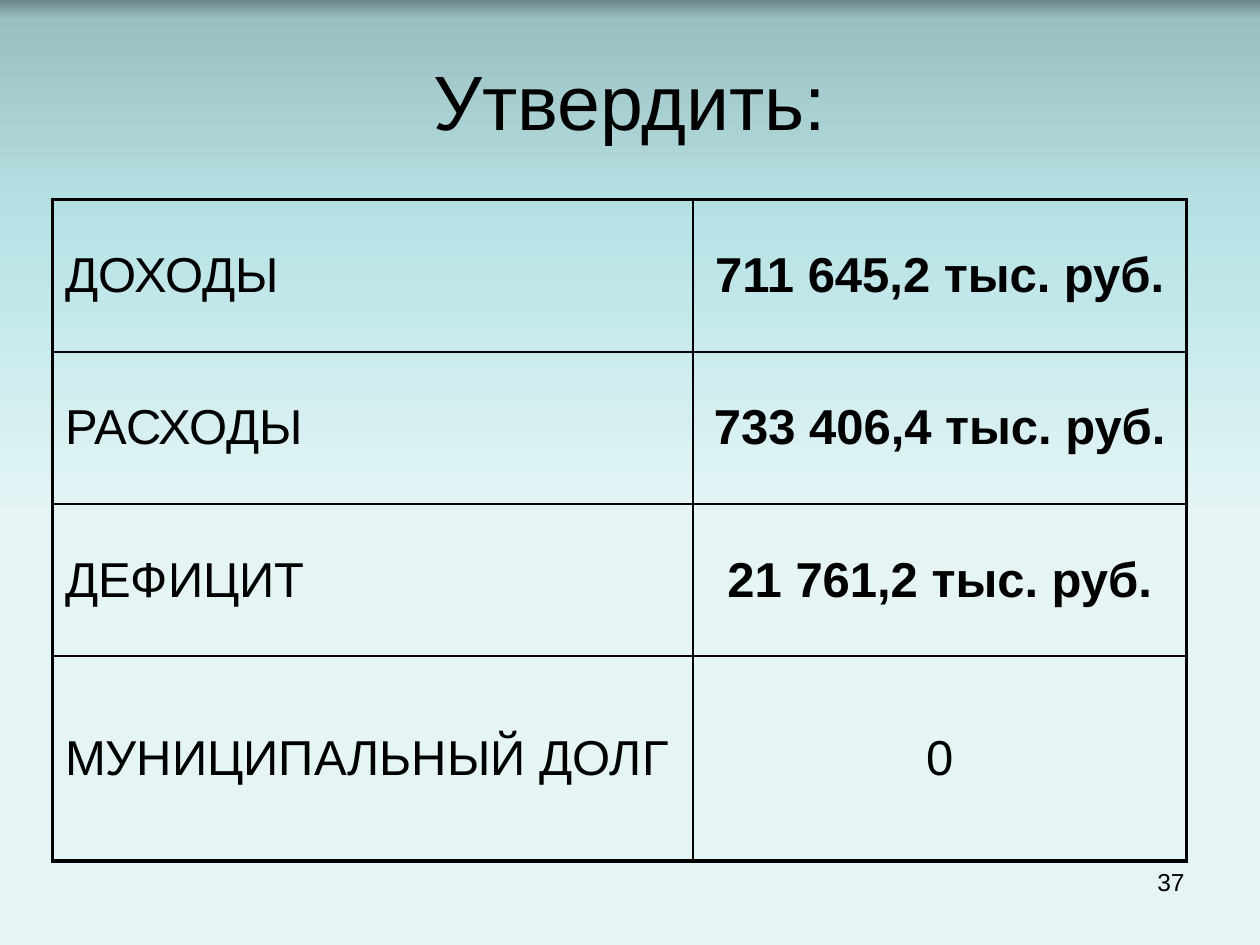
from lxml import etree
from pptx import Presentation
from pptx.dml.color import RGBColor
from pptx.enum import text
from pptx.oxml import ns
from pptx.util import Pt

# Content
TITLE = "Утвердить:"
PAGE_NUMBER = "37"
BUDGET = [
    ("ДОХОДЫ", "711 645,2 тыс. руб."),
    ("РАСХОДЫ", "733 406,4 тыс. руб."),
    ("ДЕФИЦИТ", "21 761,2 тыс. руб."),
    ("МУНИЦИПАЛЬНЫЙ ДОЛГ", "0"),
]

# Look, lengths in points
BACKGROUND = [(0, "6D8688"), (2, "9BBFC2"), (24, "B8E3E6"), (55, "E5F5F6")]
INK = "000000"
COLUMN_WIDTHS = [366, 282]
ROW_HEIGHTS = [87, 87, 87, 117]
TABLE_LEFT, TABLE_TOP = 30, 114
INNER_LINE, OUTER_LINE = 1, 2.25
LEFT, CENTER, RIGHT = (text.PP_ALIGN.LEFT, text.PP_ALIGN.CENTER,
                       text.PP_ALIGN.RIGHT)
MIDDLE = text.MSO_ANCHOR.MIDDLE


def color(value):
    return RGBColor.from_string(value)


def add_xml(parent, tag, **attributes):
    return etree.SubElement(parent, ns.qn(tag), attributes)


def write(frame, words, size, align, bold=False, before=0):
    para = frame.paragraphs[0]
    para.alignment = align
    para.space_before = Pt(before)
    span = para.add_run()
    span.text = words
    looks = {"name": "Arial", "size": Pt(size), "bold": bold}
    for name, value in looks.items():
        setattr(span.font, name, value)
    span.font.color.rgb = color(INK)


def paint_background(page):
    fill = page.background.fill
    fill.gradient()
    fill.gradient_angle = 270  # counter-clockwise, so the ramp runs downwards
    stops = page.background._cSld.find(".//" + ns.qn("a:gsLst"))
    for stop in list(stops):
        stops.remove(stop)
    for percent, value in BACKGROUND:
        stop = add_xml(stops, "a:gs", pos=str(percent * 1000))
        add_xml(stop, "a:srgbClr", val=value)


def set_borders(cell, outer_sides):
    props = cell._tc.get_or_add_tcPr()
    for index, side in enumerate("LRTB"):
        width = OUTER_LINE if side in outer_sides else INNER_LINE
        line = etree.Element(ns.qn("a:ln" + side), w=str(int(Pt(width))))
        add_xml(add_xml(line, "a:solidFill"), "a:srgbClr", val=INK)
        props.insert(index, line)


deck = Presentation()
deck.slide_width, deck.slide_height = Pt(720), Pt(540)
page = deck.slides.add_slide(deck.slide_layouts[5])
paint_background(page)

# Title
title = page.shapes.title
title.left, title.top, title.width, title.height = map(Pt, (36, 24, 648, 66))
title.text_frame.vertical_anchor = MIDDLE
write(title.text_frame, TITLE, 44, CENTER)

# Budget table
table = page.shapes.add_table(
    len(BUDGET), len(COLUMN_WIDTHS), Pt(TABLE_LEFT), Pt(TABLE_TOP),
    Pt(sum(COLUMN_WIDTHS)), Pt(sum(ROW_HEIGHTS))).table
table.first_row = table.horz_banding = False
for column, width in zip(table.columns, COLUMN_WIDTHS):
    column.width = Pt(width)
for row, height in zip(table.rows, ROW_HEIGHTS):
    row.height = Pt(height)

for r, record in enumerate(BUDGET):
    for c, words in enumerate(record):
        cell = table.cell(r, c)
        cell.vertical_anchor = MIDDLE
        cell.fill.background()
        is_amount = c == 1
        write(cell.text_frame, words, 28, CENTER if is_amount else LEFT,
              bold=is_amount and words != "0", before=5.6)
        outer = "R" if is_amount else "L"
        if r == 0:
            outer += "T"
        if r == len(BUDGET) - 1:
            outer += "B"
        set_borders(cell, outer)

# Page number
box = page.shapes.add_textbox(Pt(516), Pt(492), Pt(168), Pt(37.5))
box.text_frame.word_wrap = True
write(box.text_frame, PAGE_NUMBER, 14, RIGHT)

deck.save("out.pptx")
